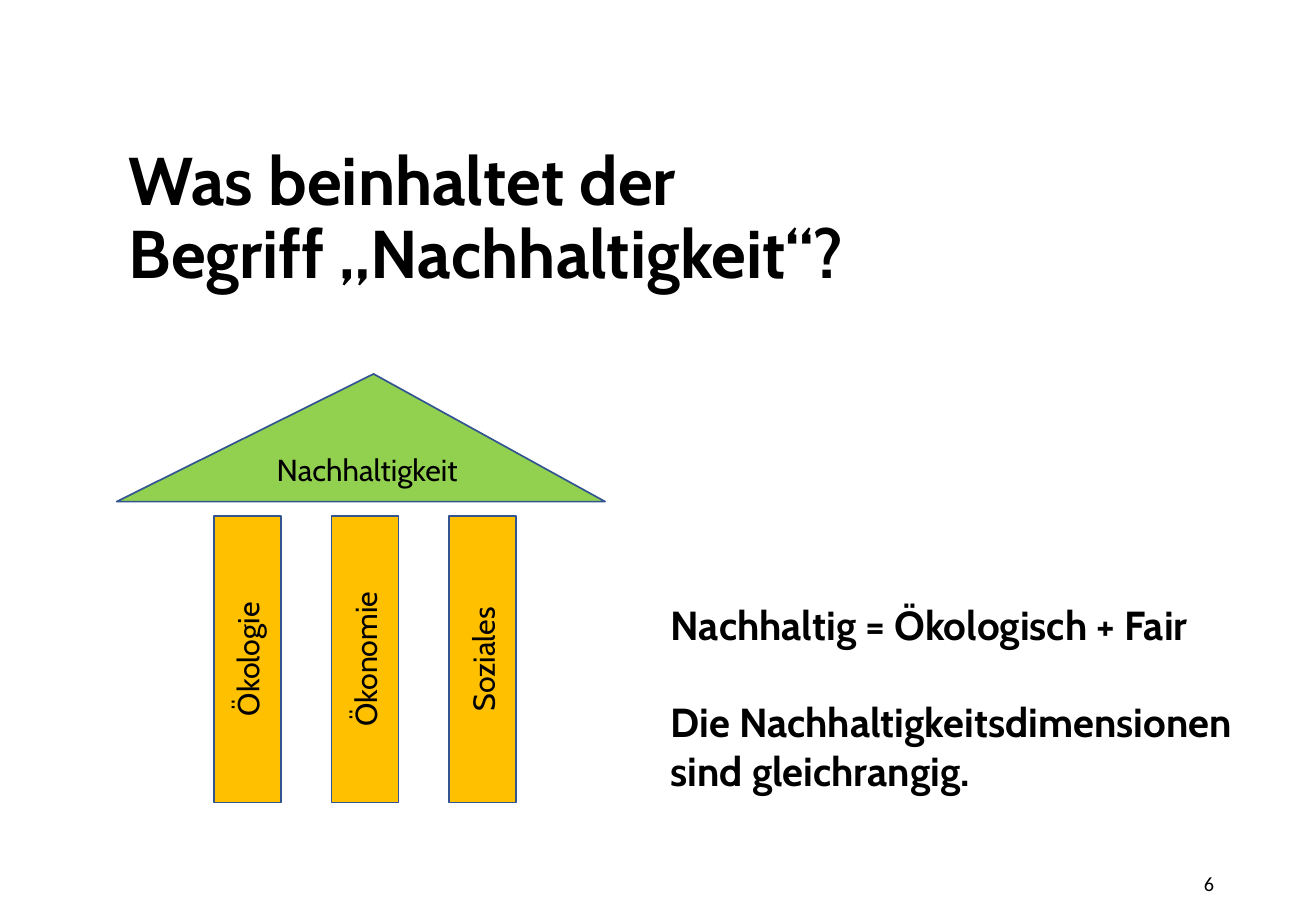
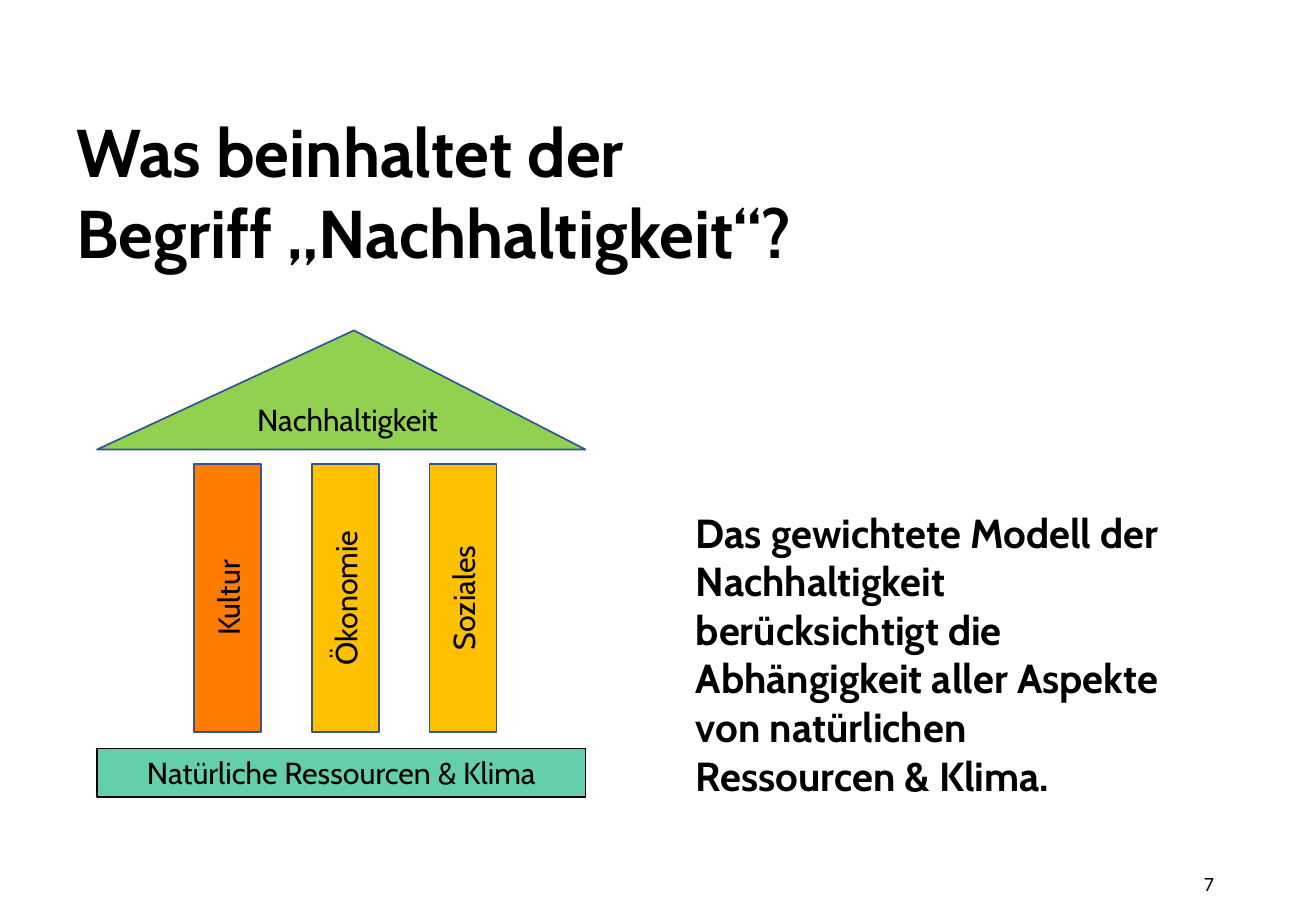
from pptx import Presentation
from pptx.dml.color import RGBColor
from pptx.enum.shapes import MSO_SHAPE
from pptx.enum.text import MSO_ANCHOR, MSO_AUTO_SIZE, PP_ALIGN
from pptx.util import Cm, Pt

BLACK = RGBColor(0x00, 0x00, 0x00)
BLUE = RGBColor(0x32, 0x54, 0x91)
GREEN = RGBColor(0x92, 0xD0, 0x50)
YELLOW = RGBColor(0xFF, 0xC0, 0x00)
ORANGE = RGBColor(0xFF, 0x7C, 0x00)
TEAL = RGBColor(0x64, 0xCF, 0xAC)

TITLE = "Was beinhaltet der\vBegriff „Nachhaltigkeit“?"


def write_text(text_frame, *texts, size=18, bold=False, font="Cabin",
               align=PP_ALIGN.LEFT, anchor=MSO_ANCHOR.TOP, line_spacing=None, gap=0):
    """Write one paragraph per text, with the gap in points between them."""
    text_frame.word_wrap = True
    text_frame.vertical_anchor = anchor
    for index, text in enumerate(texts):
        paragraph = text_frame.add_paragraph() if index else text_frame.paragraphs[0]
        paragraph.text = text
        paragraph.alignment = align
        paragraph.line_spacing = line_spacing
        paragraph.space_before = Pt(gap if index else 0)
        paragraph.font.size = Pt(size)
        paragraph.font.bold = bold
        paragraph.font.name = font
        paragraph.font.color.rgb = BLACK


class Deck:
    """Hold the shared style and the current slide."""

    roof_width = 10.21
    pillar_width = 1.4
    pillar_offset = 2.03
    pillar_pitch = 2.46
    roof_gap = 0.3
    base_gap = 0.34
    base_height = 1.02

    def __init__(self):
        """Open a presentation of the right size."""
        self.presentation = Presentation()
        self.presentation.slide_width = Cm(27.51)
        self.presentation.slide_height = Cm(19.05)
        self.slide = None

    def add_slide(self, number):
        """Start a slide and write its number."""
        self.slide = self.presentation.slides.add_slide(self.presentation.slide_layouts[5])
        box = self.slide.shapes.add_textbox(Cm(19.43), Cm(17.96), Cm(6.2), Cm(1.02))
        write_text(box.text_frame, str(number), size=12, font="Calibri",
                   align=PP_ALIGN.RIGHT, anchor=MSO_ANCHOR.MIDDLE)

    def add_title(self, left, top, height, line_spacing):
        """Place and format the title."""
        title = self.slide.shapes.title
        title.left, title.top = Cm(left), Cm(top)
        title.width, title.height = Cm(23.57), Cm(height)
        title.text_frame.auto_size = MSO_AUTO_SIZE.NONE
        write_text(title.text_frame, TITLE, size=40, bold=True,
                   anchor=MSO_ANCHOR.BOTTOM, line_spacing=line_spacing)

    def add_block(self, group, kind, text, left, top, width, height, fill, line=BLUE):
        """Add a filled and labelled shape to a group."""
        shape = group.shapes.add_shape(kind, Cm(left), Cm(top), Cm(width), Cm(height))
        shape.shadow.inherit = False
        shape.fill.solid()
        shape.fill.fore_color.rgb = fill
        shape.line.color.rgb = line
        shape.line.width = Pt(1)
        write_text(shape.text_frame, text, align=PP_ALIGN.CENTER, anchor=MSO_ANCHOR.MIDDLE)
        return shape

    def add_temple(self, left, top, roof_height, pillar_height, pillars, base=None):
        """Draw a roof on three pillars, with an optional base."""
        group = self.slide.shapes.add_group_shape()
        pillar_top = top + roof_height + self.roof_gap
        for index, (text, fill) in enumerate(pillars):
            pillar_left = left + self.pillar_offset + index * self.pillar_pitch
            pillar = self.add_block(group, MSO_SHAPE.RECTANGLE, text, pillar_left,
                                    pillar_top, self.pillar_width, pillar_height, fill)
            pillar.text_frame._txBody.bodyPr.set("vert", "vert270")
        roof = self.add_block(group, MSO_SHAPE.ISOSCELES_TRIANGLE, "Nachhaltigkeit",
                              left, top, self.roof_width, roof_height, GREEN)
        roof.adjustments[0] = 0.526
        if base:
            self.add_block(group, MSO_SHAPE.RECTANGLE, base, left,
                           pillar_top + pillar_height + self.base_gap,
                           self.roof_width, self.base_height, TEAL, BLACK)

    def add_statement(self, left, top, width, height, *texts):
        """Add the bold text beside the temple."""
        box = self.slide.shapes.add_textbox(Cm(left), Cm(top), Cm(width), Cm(height))
        box.text_frame.auto_size = MSO_AUTO_SIZE.SHAPE_TO_FIT_TEXT
        write_text(box.text_frame, *texts, size=24, bold=True, gap=29)


def main():
    """Build both slides and save them."""
    deck = Deck()
    shared_pillars = [("Ökonomie", YELLOW), ("Soziales", YELLOW)]

    deck.add_slide(6)
    deck.add_title(2.44, 2.26, 4.0, 0.9)
    deck.add_temple(2.44, 7.82, 2.67, 5.99, [("Ökologie", YELLOW), *shared_pillars])
    deck.add_statement(13.77, 12.42, 13.06, 4.37, "Nachhaltig = Ökologisch + Fair",
                       "Die Nachhaltigkeitsdimensionen sind gleichrangig.")

    deck.add_slide(7)
    deck.add_title(1.35, 1.82, 4.0, 1.0)
    deck.add_temple(2.03, 6.91, 2.49, 5.61, [("Kultur", ORANGE), *shared_pillars],
                    "Natürliche Ressourcen & Klima")
    deck.add_statement(14.3, 10.49, 10.19, 6.4,
                       "Das gewichtete Modell der Nachhaltigkeit berücksichtigt die "
                       "Abhängigkeit aller Aspekte von natürlichen Ressourcen & Klima.")

    deck.presentation.save("out.pptx")


if __name__ == "__main__":
    main()
